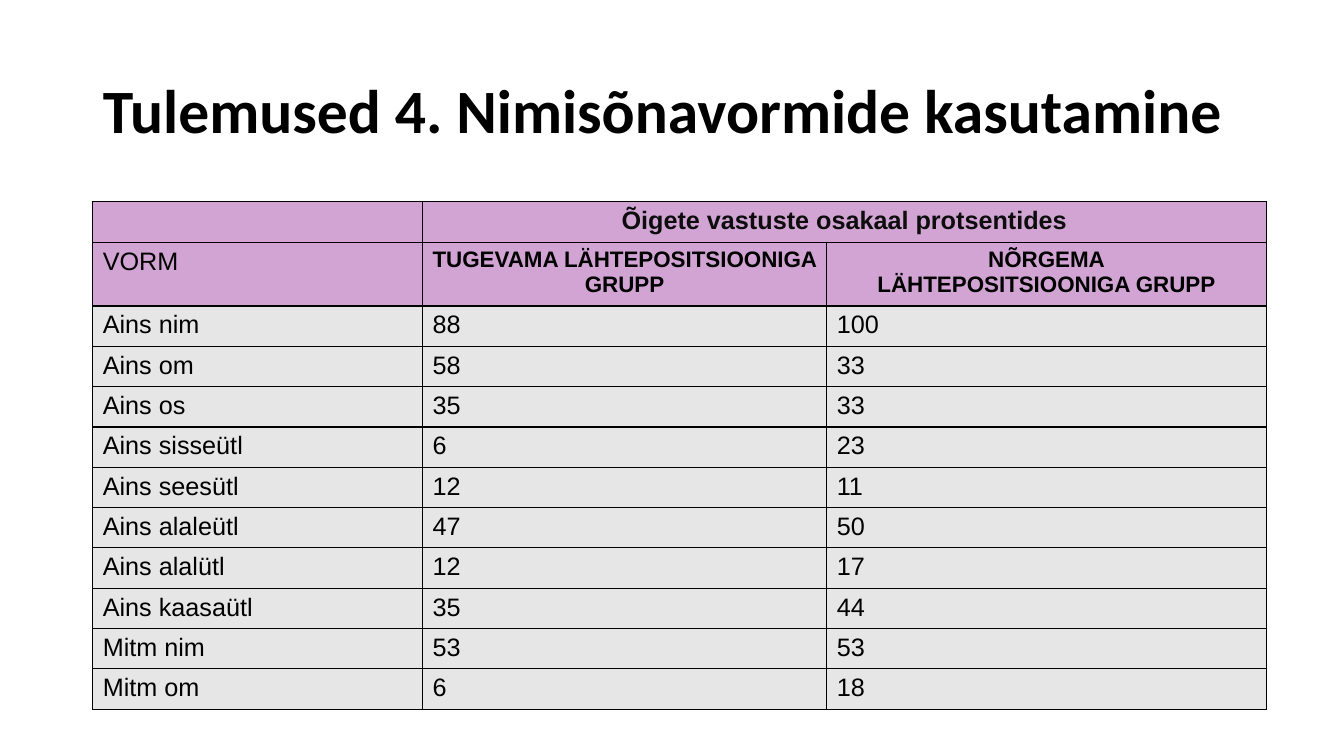
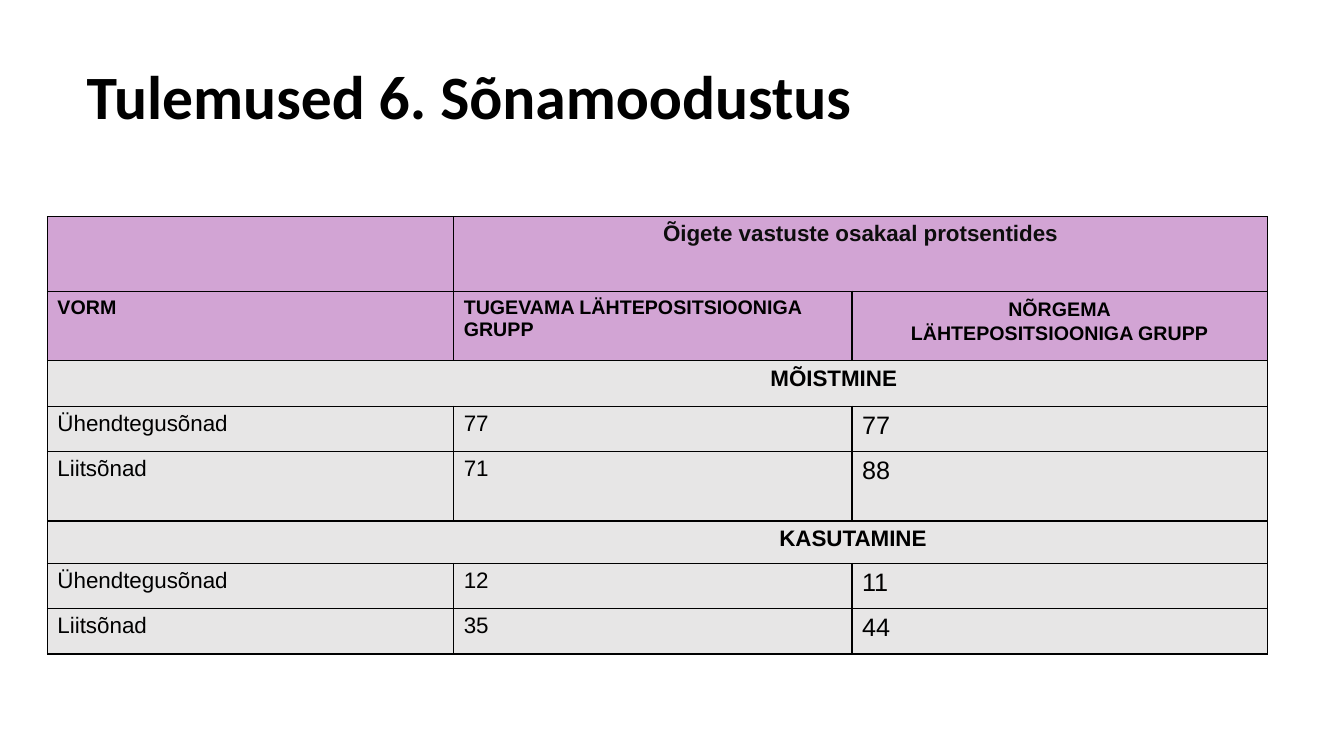
from dataclasses import dataclass

from lxml import etree
from pptx import Presentation
from pptx.dml.color import RGBColor
from pptx.enum.text import MSO_ANCHOR, MSO_AUTO_SIZE, PP_ALIGN
from pptx.oxml.ns import qn
from pptx.slide import Slide
from pptx.table import _Cell
from pptx.text.text import _Paragraph
from pptx.util import Emu, Pt

LEFT, CENTER = PP_ALIGN.LEFT, PP_ALIGN.CENTER
MIDDLE = MSO_ANCHOR.MIDDLE
NO_AUTOFIT = MSO_AUTO_SIZE.NONE

EMU_PER_PX = 9144
SLIDE_SIZE = (1333, 750)
TITLE_SIZE = (1150, 145)
TITLE_ONLY_LAYOUT = 5
CELL_INSET = 10

BLACK = "000000"
HEADING_TEXT = "0D0D0D"
HEADER_FILL = "D2A4D4"
BODY_FILL = "E7E6E6"
TITLE_FONT = "Calibri"
TABLE_FONT = "Arial"
BORDER_WIDTH = Pt(0.96)
BORDER_SIDES = ("a:lnL", "a:lnR", "a:lnT", "a:lnB")


@dataclass(frozen=True)
class TextStyle:
    """Look of the text in a table cell."""

    size: int
    bold: bool = False
    align: PP_ALIGN = LEFT
    color: str = BLACK
    leading: float | None = None
    inset: int = CELL_INSET


@dataclass(frozen=True)
class Entry:
    """Text of one cell and the number of columns it covers."""

    text: str
    style: TextStyle
    span: int = 1


@dataclass(frozen=True)
class Row:
    """One table row."""

    height: int
    entries: list[Entry]
    fill: str = BODY_FILL


@dataclass(frozen=True)
class ResultSlide:
    """A titled slide with one table of results."""

    title: str
    title_at: tuple[int, int]
    table_at: tuple[int, int]
    columns: list[int]
    rows: list[Row]


def px(length: int) -> Emu:
    """Turn a length in px into EMU."""
    return Emu(length * EMU_PER_PX)


def rgb(code: str) -> RGBColor:
    """Turn a hex string into a colour."""
    return RGBColor.from_string(code)


def format_runs(paragraph: _Paragraph, font: str, size: int, bold: bool, color: str) -> None:
    """Give every run of a paragraph the same font."""
    for run in paragraph.runs:
        run.font.name = font
        run.font.size = Pt(size)
        run.font.bold = bold
        run.font.color.rgb = rgb(color)


def draw_border(cell: _Cell) -> None:
    """Outline all four sides of a cell."""
    properties = cell._tc.get_or_add_tcPr()
    for side in BORDER_SIDES:
        line = etree.SubElement(properties, qn(side), w=str(int(BORDER_WIDTH)))
        solid = etree.SubElement(line, qn("a:solidFill"))
        etree.SubElement(solid, qn("a:srgbClr"), val=BLACK)


def write_entry(cell: _Cell, entry: Entry) -> None:
    """Put the text of an entry into a cell."""
    style = entry.style
    cell.text_frame.text = entry.text
    cell.margin_left = px(style.inset)
    for paragraph in cell.text_frame.paragraphs:
        paragraph.alignment = style.align
        if style.leading:
            paragraph.line_spacing = Pt(style.leading)
        format_runs(paragraph, TABLE_FONT, style.size, style.bold, style.color)


def add_title(slide: Slide, text: str, at: tuple[int, int]) -> None:
    """Place and format the title placeholder."""
    title = slide.shapes.title
    title.left, title.top = map(px, at)
    title.width, title.height = map(px, TITLE_SIZE)
    frame = title.text_frame
    frame.text = text
    frame.word_wrap = True
    frame.auto_size = NO_AUTOFIT
    frame.vertical_anchor = MIDDLE
    heading = frame.paragraphs[0]
    heading.alignment = LEFT
    heading.line_spacing = 0.9
    format_runs(heading, TITLE_FONT, 44, True, BLACK)


def add_results(slide: Slide, content: ResultSlide) -> None:
    """Draw the table of results."""
    width, height = sum(content.columns), sum(row.height for row in content.rows)
    table = slide.shapes.add_table(
        len(content.rows), len(content.columns),
        *map(px, (*content.table_at, width, height)),
    ).table
    table.first_row = table.horz_banding = False
    for column, column_width in zip(table.columns, content.columns):
        column.width = px(column_width)
    for row_index, row in enumerate(content.rows):
        table.rows[row_index].height = px(row.height)
        for cell in table.rows[row_index].cells:
            draw_border(cell)
            cell.fill.solid()
            cell.fill.fore_color.rgb = rgb(row.fill)
        first = 0
        for entry in row.entries:
            cell = table.cell(row_index, first)
            if entry.span > 1:
                cell.merge(table.cell(row_index, first + entry.span - 1))
            write_entry(cell, entry)
            first += entry.span


def heading_row(height: int, size: int) -> Row:
    """Make the top row that names the measured share."""
    style = TextStyle(size, True, CENTER, HEADING_TEXT)
    share = Entry("Õigete vastuste osakaal protsentides", style, 2)
    return Row(height, [Entry("", style), share], HEADER_FILL)


def group_row(height: int, form: TextStyle, stronger: TextStyle, weaker: TextStyle) -> Row:
    """Make the row that names the two groups."""
    return Row(height, [
        Entry("VORM", form),
        Entry("TUGEVAMA LÄHTEPOSITSIOONIGA GRUPP", stronger),
        Entry("NÕRGEMA\nLÄHTEPOSITSIOONIGA GRUPP", weaker),
    ], HEADER_FILL)


def section_row(height: int, name: str, inset: int) -> Row:
    """Make a full-width row that names a section."""
    return Row(height, [Entry(name, TextStyle(16, True, CENTER, inset=inset), 3)])


def score_row(height: int, form: str, stronger: int, weaker: int, size: int) -> Row:
    """Make a row with the scores of both groups."""
    label, score = TextStyle(size), TextStyle(18)
    return Row(height, [Entry(form, label), Entry(str(stronger), label), Entry(str(weaker), score)])


NOUN_SCORES = [
    ("Ains nim", 88, 100),
    ("Ains om", 58, 33),
    ("Ains os", 35, 33),
    ("Ains sisseütl", 6, 23),
    ("Ains seesütl", 12, 11),
    ("Ains alaleütl", 47, 50),
    ("Ains alalütl", 12, 17),
    ("Ains kaasaütl", 35, 44),
    ("Mitm nim", 53, 53),
    ("Mitm om", 6, 18),
]
NOUN_GROUP = TextStyle(16, True, CENTER)
WORD_GROUP = TextStyle(14, True)

SLIDES = [
    ResultSlide(
        "Tulemused 4. Nimisõnavormide kasutamine", (92, 40), (92, 200), [327, 401, 436],
        [
            heading_row(40, 18),
            group_row(63, TextStyle(18), NOUN_GROUP, NOUN_GROUP),
            *(score_row(40, *scores, 18) for scores in NOUN_SCORES),
        ],
    ),
    ResultSlide(
        "Tulemused 6. Sõnamoodustus", (76, 26), (47, 215), [403, 395, 409],
        [
            heading_row(74, 16),
            group_row(69, WORD_GROUP, WORD_GROUP, TextStyle(14, True, CENTER, leading=17.2)),
            section_row(45, "MÕISTMINE", 360),
            score_row(45, "Ühendtegusõnad", 77, 77, 16),
            score_row(69, "Liitsõnad", 71, 88, 16),
            section_row(42, "KASUTAMINE", 398),
            score_row(45, "Ühendtegusõnad", 12, 11, 16),
            score_row(45, "Liitsõnad", 35, 44, 16),
        ],
    ),
]


def main() -> None:
    """Build and save the presentation."""
    presentation = Presentation()
    presentation.slide_width, presentation.slide_height = map(px, SLIDE_SIZE)
    for content in SLIDES:
        slide = presentation.slides.add_slide(presentation.slide_layouts[TITLE_ONLY_LAYOUT])
        add_title(slide, content.title, content.title_at)
        add_results(slide, content)
    presentation.save("out.pptx")


if __name__ == "__main__":
    main()
